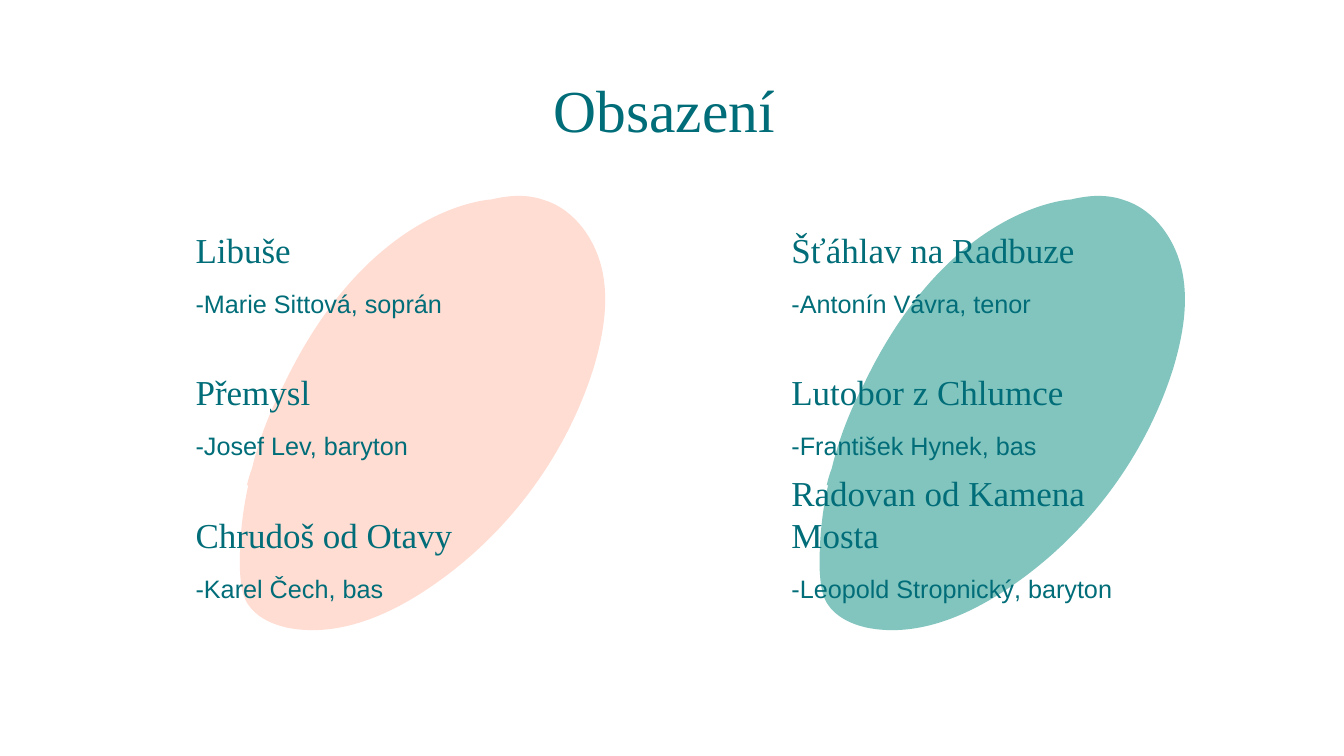
from dataclasses import dataclass

from lxml.etree import SubElement
from pptx import Presentation
from pptx.dml.color import RGBColor
from pptx.enum.text import MSO_ANCHOR, MSO_AUTO_SIZE, PP_ALIGN
from pptx.oxml.ns import qn
from pptx.util import Pt


@dataclass(frozen=True)
class Theme:
    """Colours, fonts and type sizes of the slide."""
    ink: RGBColor = RGBColor(0x01, 0x6D, 0x78)
    peach: RGBColor = RGBColor(0xFF, 0xDD, 0xD3)
    teal: RGBColor = RGBColor(0x82, 0xC5, 0xBF)
    serif: str = "Times New Roman"
    sans: str = "Arial"
    title: int = 85
    role: int = 50
    singer: int = 36


THEME = Theme()
ROLE_BOTTOM = 389.6
SINGER_TOP = 403.7
ROW_PITCH = 203.5
COLUMN_WIDTH = 497.5
LINE_HEIGHT = 60.5

PETAL_SIZE = (522, 620)
PETAL_START = (518, 109)
PETAL_SEGMENTS = [
    [(509, 64), (479, 20), (435, 6)],
    [(410, -3), (384, -1), (359, 5)],
    [(359, 5), (186, 12), (63, 269)],
    [(43, 307), (27, 348), (17, 390)],
    [(14, 397), (12, 405), (10, 413)],
    [(12, 413)],
    [(3, 453), (-1, 494), (0, 535)],
    [(1, 551), (2, 567), (10, 581)],
    [(22, 601), (45, 612), (69, 617)],
    [(137, 630), (206, 602), (264, 564)],
    [(377, 490), (464, 376), (505, 246)],
    [(518, 202), (527, 155), (518, 109)],
]

CAST = [
    (272.2, [
        ("Libuše", "-Marie Sittová, soprán", COLUMN_WIDTH, 1),
        ("Přemysl", "-Josef Lev, baryton", COLUMN_WIDTH, 1),
        ("Chrudoš od Otavy", "-Karel Čech, bas", COLUMN_WIDTH, 1),
    ]),
    (1123.2, [
        ("Šťáhlav na Radbuze", "-Antonín Vávra, tenor", 569, 1),
        ("Lutobor z Chlumce", "-František Hynek, bas", 623, 1),
        ("Radovan od Kamena Mosta", "-Leopold Stropnický, baryton", COLUMN_WIDTH, 2),
    ]),
]


def add_outline_step(outline, tag, points):
    """Append one drawing step with its points to an outline."""
    step = SubElement(outline, qn(tag))
    for x, y in points:
        SubElement(step, qn("a:pt"), x=str(Pt(x)), y=str(Pt(y)))


def add_petal(slide, left, top, color):
    """Draw one slanted, curved petal in a flat colour."""
    width, height = map(Pt, PETAL_SIZE)
    builder = slide.shapes.build_freeform(0, 0)
    builder.add_line_segments([(width, 0), (width, height), (0, height)], close=True)
    petal = builder.convert_to_shape(Pt(left), Pt(top))
    outline = next(petal.element.iter(qn("a:path")))
    for step in list(outline):
        outline.remove(step)
    add_outline_step(outline, "a:moveTo", [PETAL_START])
    for points in PETAL_SEGMENTS:
        add_outline_step(outline, "a:cubicBezTo" if len(points) == 3 else "a:lnTo", points)
    SubElement(outline, qn("a:close"))
    petal.fill.solid()
    petal.fill.fore_color.rgb = color
    petal.line.fill.background()
    petal.shadow.inherit = False


def add_text(slide, text, box, font_name, size,
             anchor=MSO_ANCHOR.TOP, align=PP_ALIGN.LEFT):
    """Add a wrapped one-paragraph text box and return its paragraph."""
    frame = slide.shapes.add_textbox(*map(Pt, box)).text_frame
    frame.word_wrap = True
    frame.auto_size = MSO_AUTO_SIZE.SHAPE_TO_FIT_TEXT
    frame.vertical_anchor = anchor
    frame.text = text
    paragraph = frame.paragraphs[0]
    paragraph.alignment = align
    font = paragraph.runs[0].font
    font.name = font_name
    font.size = Pt(size)
    font.color.rgb = THEME.ink
    return paragraph


def add_cast_member(slide, left, row, role, singer, role_width, role_lines):
    """Add a role name with its singer below."""
    offset = row * ROW_PITCH
    role_height = role_lines * LINE_HEIGHT + 7.2
    role_box = (left, ROLE_BOTTOM + offset - role_height, role_width, role_height)
    singer_box = (left, SINGER_TOP + offset, COLUMN_WIDTH, 53.3)
    credit = add_text(slide, singer, singer_box, THEME.sans, THEME.singer)
    credit.line_spacing = 1.1
    credit.space_before = Pt(12)
    credit.space_after = Pt(6)
    add_text(slide, role, role_box, THEME.serif, THEME.role, MSO_ANCHOR.BOTTOM)


def main():
    """Build the cast slide and save it."""
    deck = Presentation()
    deck.slide_width = Pt(1919.5)
    deck.slide_height = Pt(1080)
    slide = deck.slides.add_slide(deck.slide_layouts[6])
    add_petal(slide, 342.7, 280, THEME.peach)
    add_petal(slide, 1170.7, 280, THEME.teal)
    for left, members in CAST:
        for row, member in enumerate(members):
            add_cast_member(slide, left, row, *member)
    add_text(slide, "Obsazení ", (119.5, 100.8, 1679.8, 110.2), THEME.serif, THEME.title,
             align=PP_ALIGN.CENTER)
    deck.save("out.pptx")


if __name__ == "__main__":
    main()
